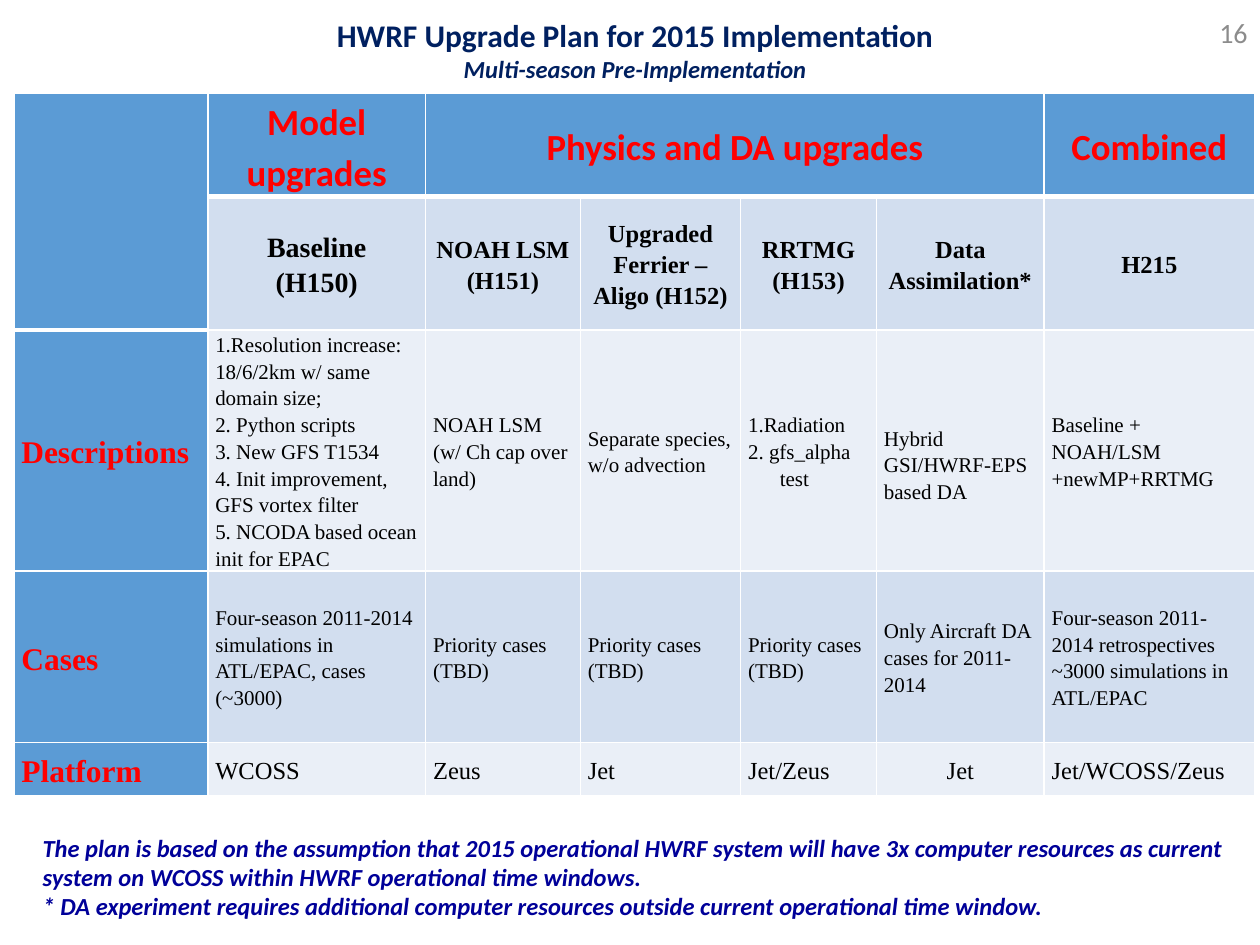
from dataclasses import dataclass

import pptx
import pptx.dml.color
import pptx.enum.text
import pptx.oxml
import pptx.oxml.ns
import pptx.util
from pptx.util import Cm

ALIGN = pptx.enum.text.PP_ALIGN
ANCHOR = pptx.enum.text.MSO_ANCHOR
BLUE, LIGHT, PALE = "5B9BD5", "D2DEEF", "EAEFF7"
COLUMN_WIDTHS = [3.91, 4.39, 3.12, 3.23, 2.74, 3.38, 4.24]
ROW_HEIGHTS = [2.08, 2.69, 4.47, 3.45, 1.07]


@dataclass(frozen=True)
class Style:
    size: float
    color: str = "000000"
    bold: bool = False
    italic: bool = False
    font: str = "Times New Roman"
    align: ALIGN = ALIGN.LEFT
    spacing: float = 1.0


@dataclass(frozen=True)
class Entry:
    lines: list[str]
    style: Style
    indent: float = 0
    top: float = 0


HEADING = Style(21, "FF0000", True, font="Calibri", align=ALIGN.CENTER, spacing=1.15)
BASELINE = Style(16, bold=True, align=ALIGN.CENTER, spacing=1.15)
EXPERIMENT = Style(14, bold=True, align=ALIGN.CENTER, spacing=1.15)
LABEL = Style(18, "FF0000", True, spacing=1.15)
BODY = Style(12, spacing=1.15)
PLATFORM = Style(14, spacing=1.15)
PLATFORM_CENTERED = Style(14, align=ALIGN.CENTER, spacing=1.15)
TITLE = Style(18, "002060", True, font="Calibri", align=ALIGN.CENTER)
SUBTITLE = Style(14, "002060", True, True, "Calibri", ALIGN.CENTER)
NOTE = Style(14, "000099", True, True, "Calibri")
NUMBER = Style(16, "8C8C8C", font="Calibri", align=ALIGN.RIGHT)

# Table content by row; None is a cell without text
ENTRIES = [
    [None, Entry(["Model upgrades"], HEADING), Entry(["Physics and DA upgrades"], HEADING),
     None, None, None, Entry(["Combined"], HEADING)],
    [None, Entry(["Baseline", "(H150)"], BASELINE)]
    + [Entry([name], EXPERIMENT) for name in (
        "NOAH LSM (H151)", "Upgraded Ferrier –Aligo (H152)", "RRTMG (H153)",
        "Data Assimilation*", "H215")],
    [Entry(["Descriptions"], LABEL),
     Entry(["1.Resolution increase: 18/6/2km w/ same domain size;", "2. Python scripts",
            "3. New GFS T1534", "4. Init improvement, GFS vortex filter",
            "5. NCODA based ocean init for EPAC"], BODY),
     Entry(["NOAH LSM", "(w/ Ch cap over land)"], BODY),
     Entry(["Separate species, w/o advection"], BODY),
     Entry(["1.Radiation", "2. gfs_alpha test"], BODY, indent=0.64),
     Entry(["Hybrid GSI/HWRF-EPS based DA"], BODY, top=0.54),
     Entry(["Baseline + NOAH/LSM +newMP+RRTMG"], BODY)],
    [Entry(["Cases"], LABEL),
     Entry(["Four-season 2011-2014 simulations in ATL/EPAC, cases (~3000)"], BODY)]
    + [Entry(["Priority cases (TBD)"], BODY)] * 3
    + [Entry(["Only Aircraft DA cases for 2011-2014"], BODY),
       Entry(["Four-season 2011-2014 retrospectives ~3000 simulations in ATL/EPAC"], BODY)],
    [Entry(["Platform"], LABEL)]
    + [Entry([name], PLATFORM) for name in ("WCOSS", "Zeus", "Jet", "Jet/Zeus")]
    + [Entry(["Jet"], PLATFORM_CENTERED), Entry(["Jet/WCOSS/Zeus"], PLATFORM)],
]


def rgb(color: str) -> pptx.dml.color.RGBColor:
    return pptx.dml.color.RGBColor.from_string(color)


def write(frame, lines: list[tuple[str, Style]], indent: float = 0) -> None:
    """Fill a text frame with one paragraph per line."""
    frame.word_wrap = True
    for index, (text, style) in enumerate(lines):
        para = frame.add_paragraph() if index else frame.paragraphs[0]
        para.alignment = style.align
        para.line_spacing = style.spacing
        para.space_before = pptx.util.Pt(0)
        if indent:
            properties = para._p.get_or_add_pPr()
            properties.set("marL", str(Cm(indent)))
            properties.set("indent", str(-Cm(indent)))
        span = para.add_run()
        span.text = text
        span.font.name = style.font
        span.font.size = pptx.util.Pt(style.size)
        span.font.bold = style.bold
        span.font.italic = style.italic
        span.font.color.rgb = rgb(style.color)


def add_borders(cell, top: float, bottom: float) -> None:
    """Draw white lines round a cell, with widths in points."""
    properties = cell._tc.get_or_add_tcPr()
    for side, width in (("L", 1), ("R", 1), ("T", top), ("B", bottom)):
        properties.append(pptx.oxml.parse_xml(
            f'<a:ln{side} {pptx.oxml.ns.nsdecls("a")} w="{pptx.util.Pt(width)}">'
            f'<a:solidFill><a:srgbClr val="FFFFFF"/></a:solidFill></a:ln{side}>'))


def add_text_box(page, place: list[float], lines: list[tuple[str, Style]], anchor) -> None:
    box = page.shapes.add_textbox(*map(Cm, place))
    box.text_frame.vertical_anchor = anchor
    write(box.text_frame, lines)


def add_plan_table(page) -> None:
    table = page.shapes.add_table(
        len(ROW_HEIGHTS), len(COLUMN_WIDTHS), Cm(0.28), Cm(1.88),
        Cm(sum(COLUMN_WIDTHS)), Cm(sum(ROW_HEIGHTS))).table
    for column, width in zip(table.columns, COLUMN_WIDTHS):
        column.width = Cm(width)
    for row, height in zip(table.rows, ROW_HEIGHTS):
        row.height = Cm(height)
    table.cell(0, 0).merge(table.cell(1, 0))
    table.cell(0, 2).merge(table.cell(0, 5))

    for r, entries in enumerate(ENTRIES):
        for c, entry in enumerate(entries):
            cell = table.cell(r, c)
            # The thick line runs below the headings and the merged corner
            heading_end = 1 if c == 0 else 0
            add_borders(cell, 3 if r == heading_end + 1 else 1,
                        3 if r <= heading_end else 1)
            cell.fill.solid()
            cell.fill.fore_color.rgb = rgb(
                BLUE if r == 0 or c == 0 else LIGHT if r % 2 else PALE)
            cell.vertical_anchor = ANCHOR.MIDDLE
            cell.margin_left = cell.margin_right = Cm(0.15)
            cell.margin_top = cell.margin_bottom = 0
            if entry:
                cell.margin_top = Cm(entry.top)
                write(cell.text_frame, [(line, entry.style) for line in entry.lines],
                      entry.indent)


def main() -> None:
    deck = pptx.Presentation()
    deck.slide_width, deck.slide_height = Cm(25.4), Cm(19.05)
    page = deck.slides.add_slide(deck.slide_layouts[5])

    add_plan_table(page)

    # Title and subtitle
    title = page.shapes.title
    title.left, title.top, title.width, title.height = map(Cm, (3.33, 0.2, 18.95, 1.68))
    title.text_frame.vertical_anchor = ANCHOR.TOP
    title.text_frame.auto_size = pptx.enum.text.MSO_AUTO_SIZE.NONE
    write(title.text_frame, [("HWRF Upgrade Plan for 2015 Implementation", TITLE),
                             ("Multi-season Pre-Implementation", SUBTITLE)])

    # Notes below the table
    add_text_box(page, [0.61, 16.66, 24.36, 2.06], [
        ("The plan is based on the assumption that 2015 operational HWRF system will have "
         "3x computer resources as current system on WCOSS within HWRF operational time "
         "windows.", NOTE),
        ("* DA experiment requires additional computer resources outside current "
         "operational time window.", NOTE)], ANCHOR.TOP)

    # Page number
    add_text_box(page, [23.95, 0, 1.45, 1.32], [("16", NUMBER)], ANCHOR.MIDDLE)

    deck.save("out.pptx")


if __name__ == "__main__":
    main()
